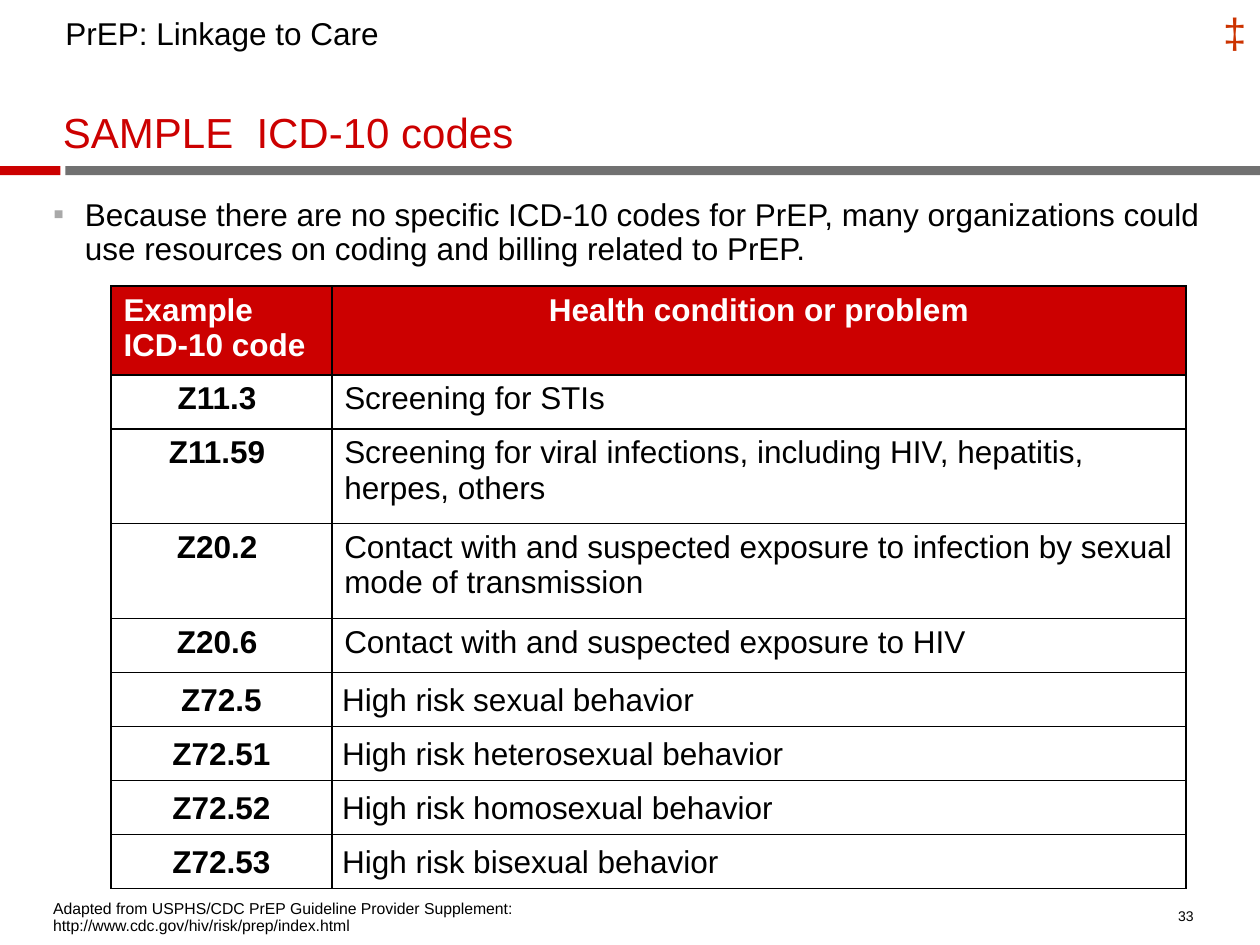
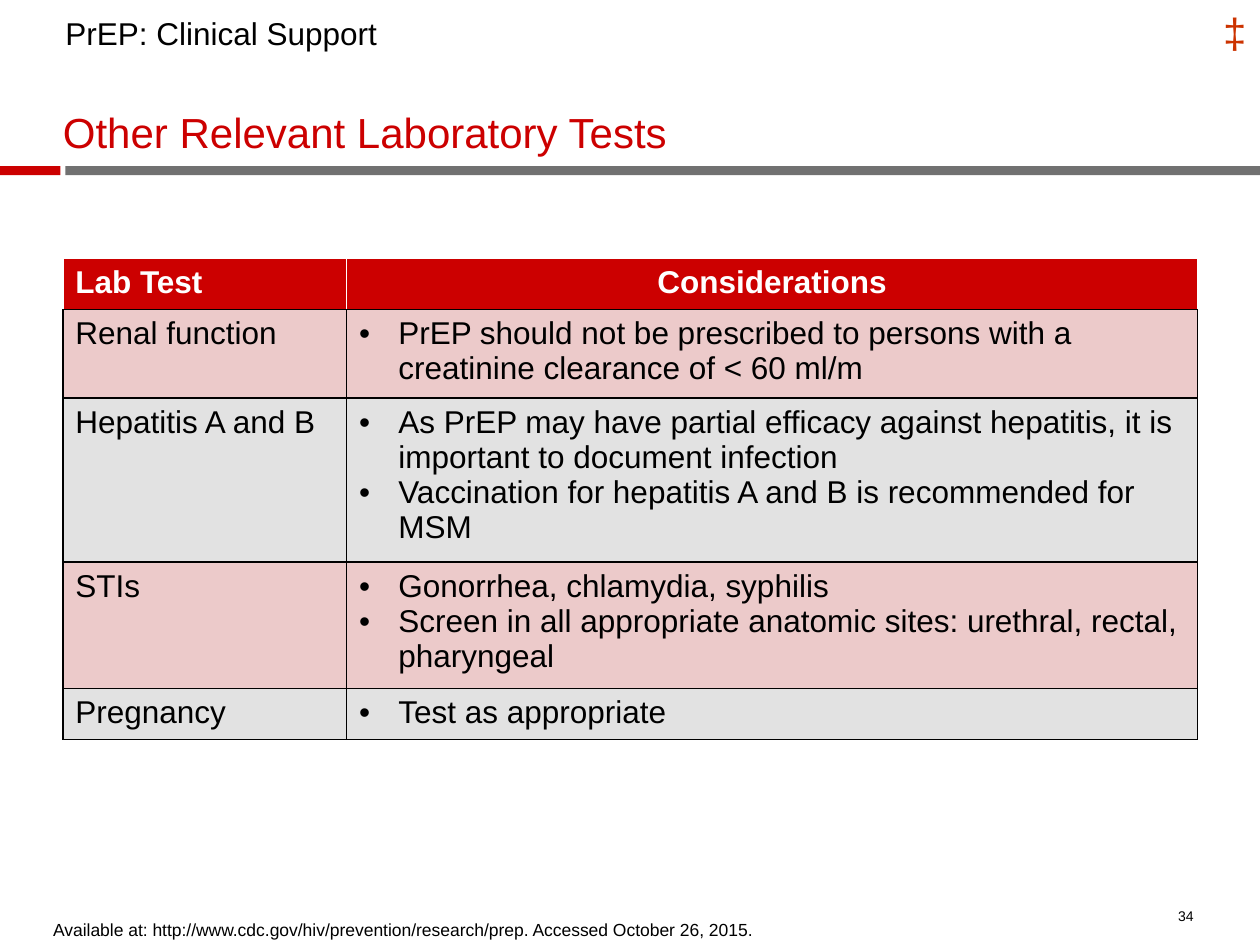
from collections import namedtuple
from dataclasses import dataclass

from lxml.etree import SubElement as Sub
from pptx import Presentation
from pptx.dml.color import RGBColor as Rgb
from pptx.enum.shapes import MSO_SHAPE as Kind
from pptx.enum.text import MSO_ANCHOR as Anchor, PP_ALIGN as Align
from pptx.oxml.ns import qn
from pptx.util import Cm, Pt

Box = namedtuple("Box", "x y w h")
PAD = (0.25, 0.13, 0.25, 0.13)
TIGHT = (0.03, 0.03, 0.03, 0)
FLUSH = (0, 0, 0, 0)


@dataclass(frozen=True)
class Theme:
    """Colours and type sizes of the deck."""
    font: str = "Arial"
    red: str = "CC0000"
    gray: str = "717171"
    mark: str = "CC3300"
    dot: str = "A9A9A9"
    ink: str = "000000"
    paper: str = "FFFFFF"
    rose: str = "ECCACA"
    ash: str = "E2E2E2"
    head: int = 24
    text: int = 18
    note: int = 10
    fine: int = 9
    page: int = 8


LOOK = Theme()


def bullet(par, char, color, inset):
    """Give a paragraph a hanging bullet."""
    props = par._p.get_or_add_pPr()
    props.set("marL", str(Cm(inset)))
    props.set("indent", str(-Cm(inset)))
    Sub(Sub(props, qn("a:buClr")), qn("a:srgbClr")).set("val", color)
    Sub(props, qn("a:buFont")).set("typeface", LOOK.font)
    Sub(props, qn("a:buChar")).set("char", char)


def style(par, size=LOOK.text, color=LOOK.ink, bold=False):
    """Set the font of a paragraph."""
    font = par.font
    font.name, font.size, font.bold = LOOK.font, Pt(size), bold
    font.color.rgb = Rgb.from_string(color)


def pad(item, sides):
    """Set the inner margins of a cell or text frame."""
    item.margin_left, item.margin_top, item.margin_right, item.margin_bottom = map(Cm, sides)


def label(slide, box, text, size=LOOK.text, color=LOOK.ink, sides=FLUSH,
          anchor=Anchor.TOP, wrap=True, lead=0.9):
    """Add one paragraph in a text box and return the paragraph."""
    frame = slide.shapes.add_textbox(*map(Cm, box)).text_frame
    frame.word_wrap, frame.vertical_anchor = wrap, anchor
    pad(frame, sides)
    par = frame.paragraphs[0]
    par.text, par.line_spacing = text, lead
    style(par, size, color)
    return par


def bar(slide, box, color):
    """Add a plain filled bar."""
    shape = slide.shapes.add_shape(Kind.RECTANGLE, *map(Cm, box))
    shape.shadow.inherit = False
    shape.fill.solid()
    shape.fill.fore_color.rgb = Rgb.from_string(color)
    shape.line.fill.background()


def band(slide, box, split=1.22, gap=0.1):
    """Draw the two-colour rule under the title."""
    start = split + gap
    bar(slide, box._replace(x=box.x + start, w=box.w - start), LOOK.gray)
    bar(slide, box._replace(w=split), LOOK.red)


def frame(slide, box, topic, title, page):
    """Place the parts that every slide shares."""
    band(slide, Box(box.x, box.y + 3.35, box.w, 0.18))
    label(slide, Box(box.x + box.w - 0.99, box.y, 0.86, 1.27), "‡", LOOK.head, LOOK.mark,
          PAD, Anchor.MIDDLE, False, 1.0)
    label(slide, Box(box.x + box.w - 1.65, box.y + box.h - 0.71, 0.66, 0.46), page, LOOK.page)
    label(slide, Box(box.x + 1.27, box.y + 1.3, 22.86, 1.88), title, LOOK.head, LOOK.red,
          anchor=Anchor.BOTTOM)
    label(slide, Box(box.x + 1.07, box.y + 0.23, 22.86, 0.84), topic, sides=PAD)


def border(cell, edges):
    """Draw one-point cell borders, edges being colours in L R T B order."""
    props = cell._tc.get_or_add_tcPr()
    for side, color in zip("LRTB", edges):
        line = Sub(props, qn(f"a:ln{side}"))
        line.set("w", str(Pt(1)))
        Sub(Sub(line, qn("a:solidFill")), qn("a:srgbClr")).set("val", color)


def fill(cell, lines, back, edges=(LOOK.ink,) * 4, sides=PAD, anchor=Anchor.TOP,
         color=LOOK.ink, bold=False, align=Align.LEFT, dots=False):
    """Write and format one table cell."""
    border(cell, edges)
    cell.fill.solid()
    cell.fill.fore_color.rgb = Rgb.from_string(back)
    pad(cell, sides)
    cell.vertical_anchor = anchor
    cell.text = "\n".join(lines)
    for par in cell.text_frame.paragraphs:
        par.alignment = align
        if dots:
            bullet(par, "•", LOOK.ink, 0.79)
        style(par, color=color, bold=bold)


def grid(slide, x, y, cols, rows, heads, edges):
    """Add a table with its red header row."""
    box = Box(x, y, sum(cols), sum(rows))
    table = slide.shapes.add_table(len(rows), len(cols), *map(Cm, box)).table
    table.horz_banding = False
    for part, size in zip(table.columns, cols):
        part.width = Cm(size)
    for part, size in zip(table.rows, rows):
        part.height = Cm(size)
    for col, (lines, align) in enumerate(zip(heads, (Align.LEFT, Align.CENTER))):
        fill(table.cell(0, col), lines, LOOK.red, edges, color=LOOK.paper, bold=True, align=align)
    return table


def codes(slide, box):
    """Fill the slide of sample codes."""
    frame(slide, box, "PrEP: Linkage to Care", "SAMPLE  ICD-10 codes", "33")
    par = label(slide, Box(box.x + 1.07, box.y + 4.01, 23.5, 1.83),
                "Because there are no specific ICD-10 codes for PrEP, many organizations "
                "could use resources on coding and billing related to PrEP.")
    par._p.pPr.remove(par._p.pPr.find(qn("a:defRPr")))
    bullet(par, "▪", LOOK.dot, 0.64)
    style(par)
    data = [
        ("Z11.3 ", "Screening for STIs", 1.09),
        ("Z11.59 ", "Screening for viral infections, including HIV, hepatitis, herpes, others", 1.91),
        ("Z20.2 ", "Contact with and suspected exposure to infection by sexual mode of transmission", 1.91),
        ("Z20.6 ", "Contact with and suspected exposure to HIV", 1.09),
        ("Z72.5", " High risk sexual behavior", 1.09),
        ("Z72.51", " High risk heterosexual behavior", 1.09),
        ("Z72.52", " High risk homosexual behavior", 1.09),
        ("Z72.53", " High risk bisexual behavior", 1.09),
    ]
    table = grid(slide, box.x + 2.24, box.y + 5.77, (4.45, 17.22),
                 [1.69] + [tall for *_, tall in data],
                 (("Example", "ICD-10 code"), ("Health condition or problem",)), (LOOK.ink,) * 4)
    for row, (code, issue, _) in enumerate(data, 1):
        risk = code.startswith("Z72")
        form = dict(back=LOOK.paper, sides=TIGHT if risk else PAD,
                    anchor=Anchor.MIDDLE if risk else Anchor.TOP)
        fill(table.cell(row, 0), [code], bold=True, align=Align.CENTER, **form)
        fill(table.cell(row, 1), [issue], **form)
    label(slide, Box(box.x + 1.07, box.y + 18.16, 12.5, 0.71),
          "Adapted from USPHS/CDC PrEP Guideline Provider Supplement: "
          "http://www.cdc.gov/hiv/risk/prep/index.html", LOOK.fine)


def tests(slide, box):
    """Fill the slide of laboratory tests."""
    frame(slide, box, "PrEP: Clinical Support", "Other Relevant Laboratory Tests", "34")
    data = [
        ("Renal function", 1.68, [
            "PrEP should not be prescribed to persons with a creatinine clearance of < 60 ml/m"]),
        ("Hepatitis A and B", 3.1, [
            "As PrEP may have partial efficacy against hepatitis, it is important to document infection",
            "Vaccination for hepatitis A and B is recommended for MSM"]),
        ("STIs", 2.39, [
            "Gonorrhea, chlamydia, syphilis",
            "Screen in all appropriate anatomic sites: urethral, rectal, pharyngeal"]),
        ("Pregnancy", 1.03, ["Test as appropriate"]),
    ]
    table = grid(slide, box.x + 1.27, box.y + 5.21, (5.72, 17.15),
                 [1.03] + [tall for _, tall, _ in data],
                 (("Lab Test",), ("Considerations",)), (LOOK.paper,) * 3 + (LOOK.ink,))
    for row, (test, _, notes) in enumerate(data, 1):
        back = LOOK.rose if row % 2 else LOOK.ash
        fill(table.cell(row, 0), [test], back)
        fill(table.cell(row, 1), notes, back, dots=True)
    label(slide, Box(box.x + 1.07, box.y + 18.57, 20.4, 0.74),
          "Available at: http://www.cdc.gov/hiv/prevention/research/prep. "
          "Accessed October 26, 2015.", LOOK.note)


def main():
    """Build and save the deck."""
    deck = Presentation()
    page = Box(0, 0, 25.4, 19.05)
    deck.slide_width, deck.slide_height = Cm(page.w), Cm(page.h)
    for build in (codes, tests):
        build(deck.slides.add_slide(deck.slide_layouts[6]), page)
    deck.save("out.pptx")


if __name__ == "__main__":
    main()
